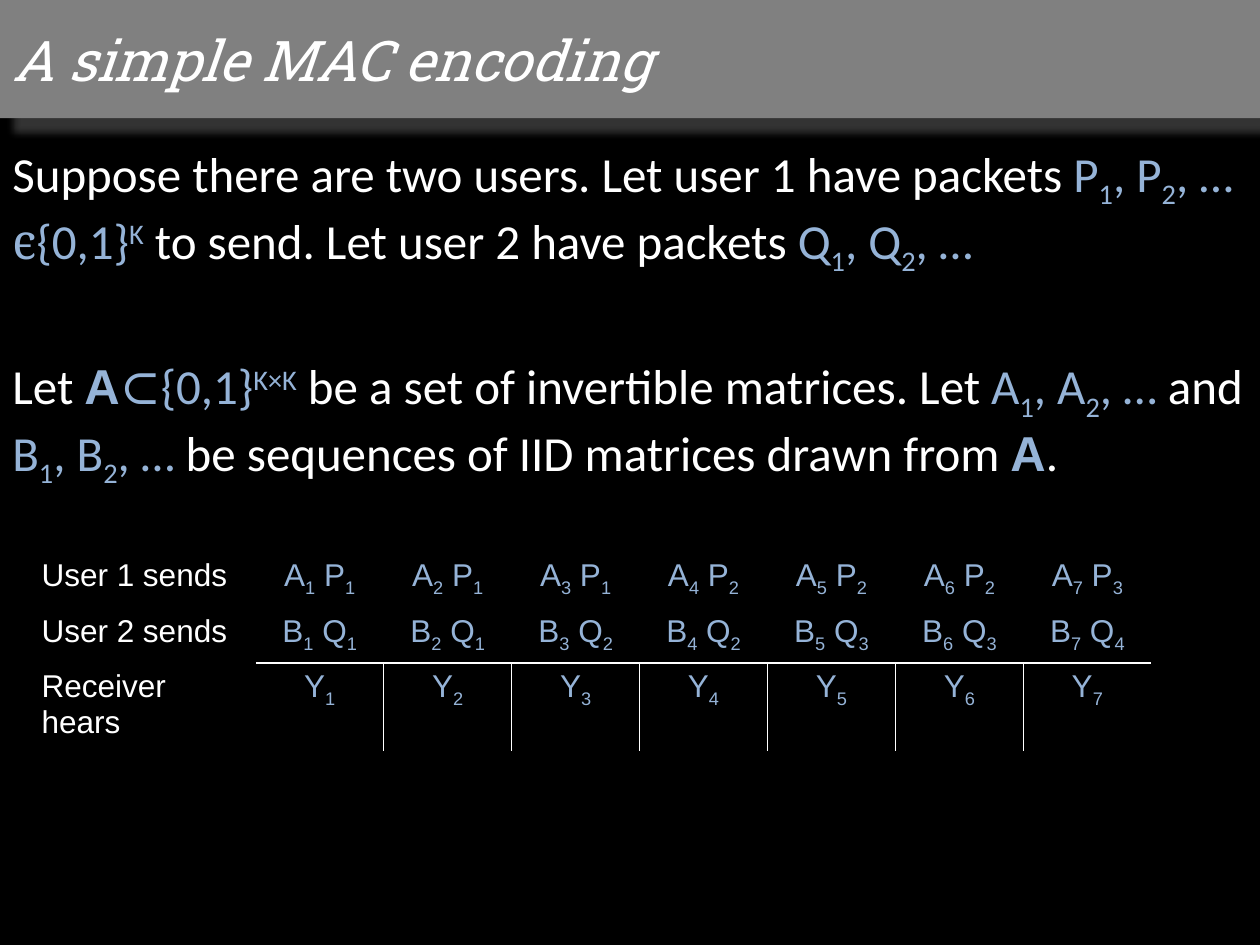
import pptx
import pptx.dml.color
import pptx.enum.shapes
import pptx.enum.text
import pptx.oxml
import pptx.util
import lxml.etree

Pt = pptx.util.Pt
align = pptx.enum.text.PP_ALIGN
anchor = pptx.enum.text.MSO_ANCHOR
NS = 'xmlns:a="http://schemas.openxmlformats.org/drawingml/2006/main"'
WHITE, BLUE, GREY, BLACK = "FFFFFF", "95B3D7", "808080", "000000"


def tint(code):
    return pptx.dml.color.RGBColor.from_string(code)


def write(par, text, size, face, color, base=-25, bold=False, slant=False):
    """Add runs; every second piece between bars is raised or lowered by base."""
    for n, piece in enumerate(text.split("|")):
        if not piece:
            continue
        run = par.add_run()
        run.text = piece
        font = run.font
        font.size, font.name, font.bold, font.italic = Pt(size), face, bold, slant
        font.color.rgb = tint(color)
        if n % 2:
            run._r.get_or_add_rPr().set("baseline", str(base * 1000))


deck = pptx.Presentation()
deck.slide_width, deck.slide_height = pptx.util.Inches(10), pptx.util.Inches(7.5)
W, H = deck.slide_width, deck.slide_height
slide = deck.slides.add_slide(deck.slide_layouts[6])
slide.background.fill.solid()
slide.background.fill.fore_color.rgb = tint(BLACK)

# Title bar with a soft shadow
bar = slide.shapes.add_shape(
    pptx.enum.shapes.MSO_SHAPE.RECTANGLE, 0, 0, W, int(H * 0.125))
bar.fill.solid()
bar.fill.fore_color.rgb = tint(GREY)
bar.line.fill.background()
bar.shadow.inherit = False
glow = bar._element.spPr.find(pptx.oxml.ns.qn("a:effectLst"))
glow.append(lxml.etree.fromstring(
    f'<a:outerShdw {NS} blurRad="{Pt(4)}" dist="{Pt(11)}" dir="2700000" '
    f'algn="tl" rotWithShape="0"><a:srgbClr val="{GREY}">'
    '<a:alpha val="40000"/></a:srgbClr></a:outerShdw>'))
bar.text_frame.vertical_anchor = anchor.MIDDLE
head = bar.text_frame.paragraphs[0]
head.alignment = align.LEFT
write(head, "A simple MAC encoding", 32, "Roboto Slab", WHITE, slant=True)

# Body text: text, font, colour, baseline shift, bold
body = [
    [("Suppose there are two users. Let user 1 have packets ", "Calibri", WHITE),
     ("P|1|, P|2|, … ", "Calibri", BLUE),
     ("ϵ", "Cambria", BLUE),
     ("{0,1}|K", "Calibri", BLUE, 30),
     (" to send. Let user 2 have packets ", "Calibri", WHITE),
     ("Q|1|, Q|2|, …", "Calibri", BLUE)],
    [("Let ", "Calibri", WHITE),
     ("A", "Arial", BLUE, 0, True),
     ("⊂", "Cambria", BLUE),
     ("{0,1}|K×K", "Calibri", BLUE, 30),
     (" be a set of invertible matrices. Let ", "Calibri", WHITE),
     ("A|1|, A|2|, …", "Calibri", BLUE),
     (" and ", "Calibri", WHITE),
     ("B|1|, B|2|, …", "Calibri", BLUE),
     (" be sequences of IID matrices drawn from ", "Calibri", WHITE),
     ("A", "Arial", BLUE, 0, True),
     (".", "Calibri", WHITE)],
]
box = slide.shapes.add_textbox(0, int(H * 0.145), W, int(H * 0.855))
frame = box.text_frame
frame.word_wrap = True
for n, parts in enumerate(body):
    par = frame.add_paragraph() if n else frame.paragraphs[0]
    par.space_before = Pt(45 * n)
    for text, face, *rest in parts:
        write(par, text, 28, face, rest[0], *rest[1:])

# Table of slots: each user holds a packet for a fixed number of slots
slots = range(1, 8)
rows = [
    ["User 1 sends"] + [f"A|{i}| P|{(i + 2) // 3}" for i in slots],
    ["User 2 sends"] + [f"B|{i}| Q|{(i + 1) // 2}" for i in slots],
    ["Receiver hears"] + [f"Y|{i}" for i in slots],
]
wide, lead, tall = W * 0.891, W * 0.18, H * 0.054
grid = slide.shapes.add_table(
    3, 8, int(W * 0.023), int(H * 0.584), int(wide), int(tall * 3)).table
grid.first_row = grid.horz_banding = False
style = grid._tbl.tblPr.find(pptx.oxml.ns.qn("a:tableStyleId"))
style.text = "{2D5ABB26-0587-4C30-8999-92F81FD0307C}"
for c, col in enumerate(grid.columns):
    col.width = int((wide - lead) / 7 if c else lead)
for r, row in enumerate(rows):
    grid.rows[r].height = int(tall)
    for c, text in enumerate(row):
        cell = grid.cell(r, c)
        par = cell.text_frame.paragraphs[0]
        par.alignment = align.CENTER if c else align.LEFT
        write(par, text, 18, "Arial", BLUE if c else WHITE)
        # Rule above the received row, bars between its slots
        sides = {"L": r == 2 and c > 1, "R": r == 2 and 0 < c < 7,
                 "T": r == 2 and c > 0, "B": r == 1 and c > 0}
        props = cell._tc.get_or_add_tcPr()
        for side, shown in sides.items():
            if shown:
                props.append(lxml.etree.fromstring(
                    f'<a:ln{side} {NS} w="{Pt(1)}"><a:solidFill>'
                    f'<a:srgbClr val="{WHITE}"/></a:solidFill></a:ln{side}>'))
        cell.fill.background()

deck.save("out.pptx")
